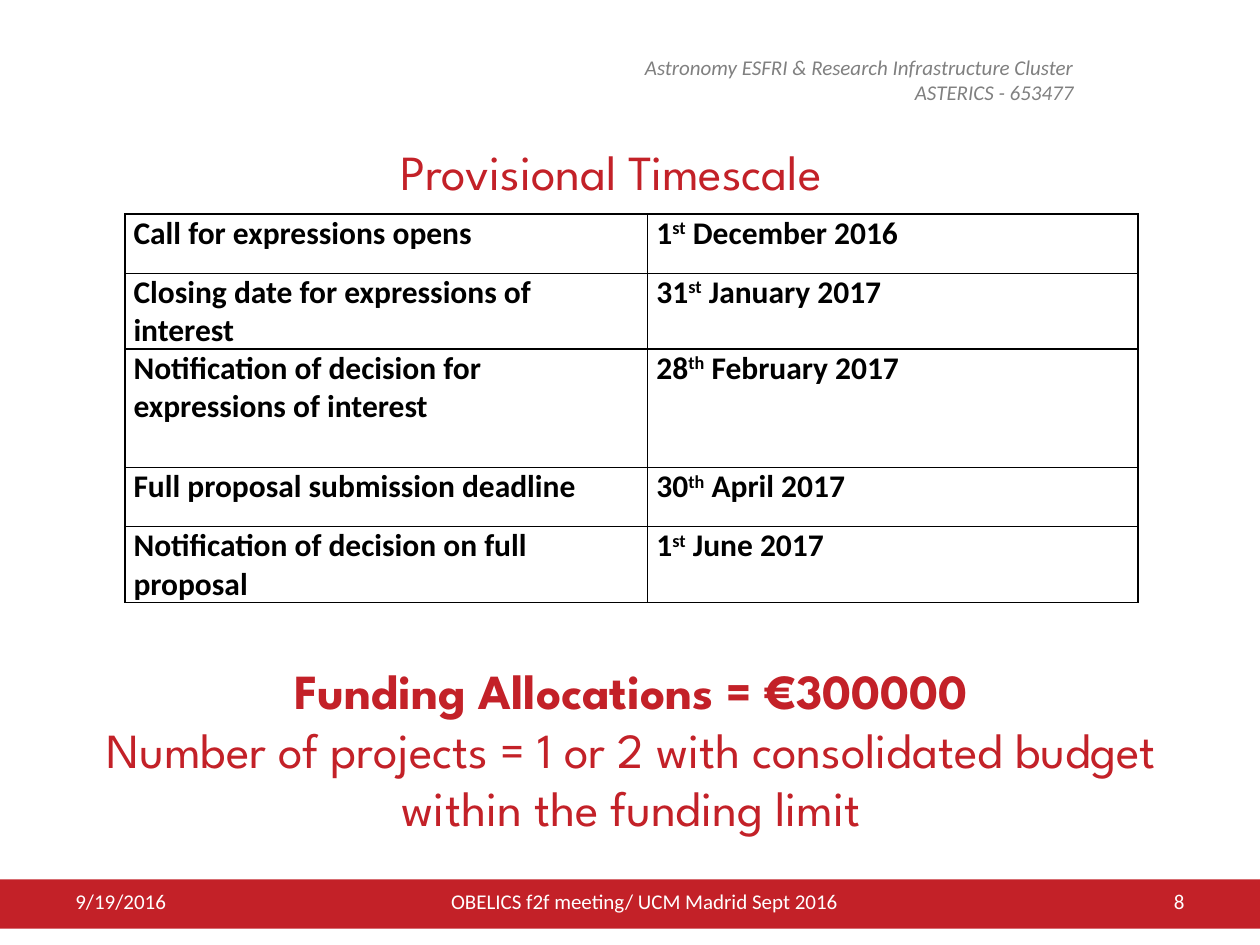
from dataclasses import dataclass

from lxml.etree import SubElement
from pptx import Presentation
from pptx.dml.color import RGBColor
from pptx.enum.shapes import MSO_SHAPE
from pptx.enum.text import MSO_ANCHOR, PP_ALIGN
from pptx.oxml.ns import qn
from pptx.util import Inches, Pt

RED, WHITE, GREY, BLACK = "C32128", "FFFFFF", "808080", "000000"
BODY_FONT, DISPLAY_FONT = "Calibri", "League Spartan"


@dataclass
class TextBlock:
    lines: list[str]
    left: float
    top: float
    width: float
    height: float
    align: PP_ALIGN
    size: int = 12
    font: str = BODY_FONT
    color: str = WHITE
    italic: bool = False
    anchor: MSO_ANCHOR = MSO_ANCHOR.MIDDLE


@dataclass
class Milestone:
    name: str
    day: str
    suffix: str
    month: str
    height: float = 0.47


HEADER = TextBlock(
    ["Astronomy ESFRI & Research Infrastructure Cluster", "ASTERICS - 653477"],
    4.37, 0.38, 4.25, 0.5, PP_ALIGN.RIGHT,
    color=GREY, italic=True, anchor=MSO_ANCHOR.TOP)
TITLE = TextBlock(["Provisional Timescale"], 0.35, 0.89, 9, 0.94, PP_ALIGN.CENTER,
                  28, DISPLAY_FONT, RED)
FUNDING = TextBlock(
    ["Funding Allocations = €300000",
     "Number of projects = 1 or 2 with consolidated budget within the funding limit"],
    0.51, 4.93, 9, 2.02, PP_ALIGN.CENTER, 28, DISPLAY_FONT, RED)
FOOTERS = [
    TextBlock(["9/19/2016"], 0.5, 6.95, 2.33, 0.4, PP_ALIGN.LEFT),
    TextBlock(["OBELICS f2f meeting/ UCM Madrid Sept 2016"],
              3.42, 6.95, 3.39, 0.4, PP_ALIGN.CENTER),
    TextBlock(["8"], 7.17, 6.95, 2.33, 0.4, PP_ALIGN.RIGHT),
]
MILESTONES = [
    Milestone("Call for expressions opens", "1", "st", " December 2016"),
    Milestone("Closing date for expressions of interest", "31", "st", " January 2017"),
    Milestone("Notification of decision for expressions of interest",
              "28", "th", " February 2017", 0.94),
    Milestone("Full proposal submission deadline", "30", "th", " April 2017"),
    Milestone("Notification of decision on full proposal", "1", "st", " June 2017"),
]
COLUMN_WIDTHS = [4.15, 3.89]


def rgb(color: str) -> RGBColor:
    return RGBColor.from_string(color)


def style_font(font, name: str, size: int, color: str) -> None:
    font.name = name
    font.size = Pt(size)
    font.color.rgb = rgb(color)


def fill_text(box, block: TextBlock) -> None:
    """Place a text box or placeholder and write the block into it."""
    box.left, box.top = Inches(block.left), Inches(block.top)
    box.width, box.height = Inches(block.width), Inches(block.height)
    frame = box.text_frame
    frame.word_wrap = True
    frame.vertical_anchor = block.anchor
    frame.text = "\n".join(block.lines)
    for para in frame.paragraphs:
        para.alignment = block.align
        for span in para.runs:
            style_font(span.font, block.font, block.size, block.color)
            span.font.italic = block.italic


def add_text(page, block: TextBlock):
    box = page.shapes.add_textbox(0, 0, 0, 0)
    fill_text(box, block)
    return box


def add_footer_band(page) -> None:
    band = page.shapes.add_shape(
        MSO_SHAPE.RECTANGLE, 0, Inches(6.98), Inches(10), Inches(0.39))
    band.shadow.inherit = False
    band.fill.solid()
    band.fill.fore_color.rgb = rgb(RED)
    band.line.fill.background()


def style_cell(cell) -> None:
    cell.margin_left = cell.margin_right = Inches(0.07)
    cell.margin_top = cell.margin_bottom = 0
    properties = cell._tc.get_or_add_tcPr()
    for side in ("a:lnL", "a:lnR", "a:lnT", "a:lnB"):
        border = SubElement(properties, qn(side), w=str(Pt(1)))
        solid = SubElement(border, qn("a:solidFill"))
        SubElement(solid, qn("a:srgbClr"), val=BLACK)
    cell.fill.background()
    para = cell.text_frame.paragraphs[0]
    para.space_after = Pt(12)
    for span in para.runs:
        style_font(span.font, BODY_FONT, 18, BLACK)
        span.font.bold = True


def add_timetable(page, milestones: list[Milestone]) -> None:
    height = sum(milestone.height for milestone in milestones)
    table = page.shapes.add_table(
        len(milestones), len(COLUMN_WIDTHS), Inches(0.99), Inches(1.7),
        Inches(sum(COLUMN_WIDTHS)), Inches(height)).table
    table.first_row = table.horz_banding = False
    for column, width in zip(table.columns, COLUMN_WIDTHS):
        column.width = Inches(width)
    for row, milestone in zip(table.rows, milestones):
        row.height = Inches(milestone.height)
        name_cell, date_cell = row.cells
        name_cell.text_frame.text = milestone.name
        date = date_cell.text_frame.paragraphs[0]
        for text in (milestone.day, milestone.suffix, milestone.month):
            date.add_run().text = text
        date.runs[1]._r.get_or_add_rPr().set("baseline", "30000")
        for cell in row.cells:
            style_cell(cell)


def main() -> None:
    deck = Presentation()
    deck.slide_width, deck.slide_height = Inches(10), Inches(7.5)
    page = deck.slides.add_slide(deck.slide_layouts[5])
    add_footer_band(page)
    add_text(page, HEADER)
    fill_text(page.shapes.title, TITLE)
    add_timetable(page, MILESTONES)
    funding = add_text(page, FUNDING)
    funding.text_frame.paragraphs[0].runs[0].font.bold = True
    for footer in FOOTERS:
        add_text(page, footer)
    deck.save("out.pptx")


if __name__ == "__main__":
    main()
